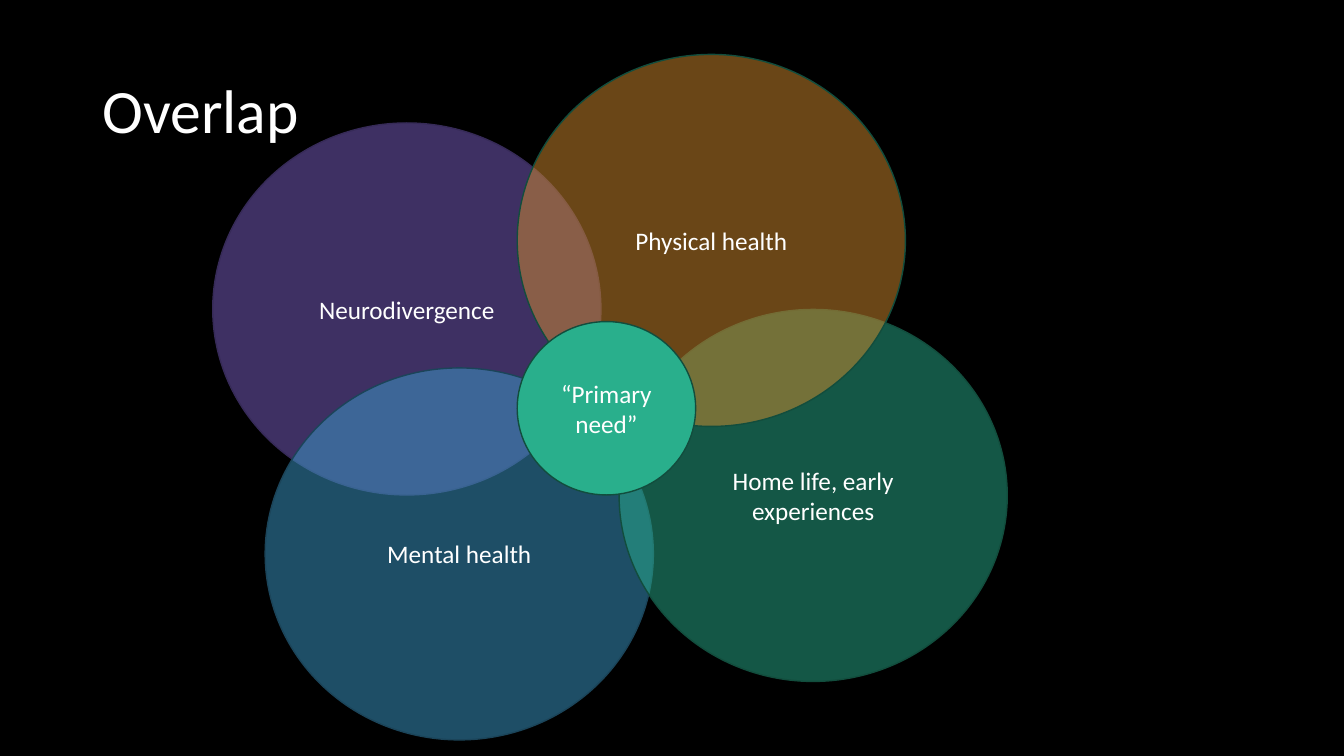
import pptx
import pptx.dml.color
import pptx.enum.shapes
import pptx.enum.text
import pptx.oxml
import pptx.oxml.ns
import pptx.util

PX = 9144  # EMU in one px, 100 px to the inch
SLIDE_SIZE = (1333, 750)
FONT = "Calibri"
COLORS = {
    "background": "000000",
    "text": "FFFFFF",
    "purple": "7C60C6",
    "purple_line": "362A57",
    "blue": "3D9CCC",
    "blue_line": "1B4459",
    "green": "29AF8C",
    "green_line": "124D3D",
    "orange": "D58C2E",
}

TITLE_BOX = (92, 40, 1150, 145)
CIRCLE_SIZE = (385, 369)
CENTRE_BOX = (513, 319, 177, 172)
# label, left and top, fill, line
CIRCLES = [
    ("Neurodivergence", (211, 122), "purple", "purple_line"),
    ("Mental health", (263, 365), "blue", "blue_line"),
    ("Home life, early experiences", (614, 307), "green", "green_line"),
    ("Physical health", (513, 54), "orange", "green_line"),
]


def emu(box):
    return [pptx.util.Emu(n * PX) for n in box]


def rgb(name):
    return pptx.dml.color.RGBColor.from_string(COLORS[name])


def write(s, text, size, align, spacing=1.0):
    tf = s.text_frame
    tf.word_wrap = True
    tf.vertical_anchor = pptx.enum.text.MSO_ANCHOR.MIDDLE
    p = tf.paragraphs[0]
    p.alignment = align
    p.line_spacing = spacing
    r = p.add_run()
    r.text = text
    for name, value in {"name": FONT, "size": pptx.util.Pt(size)}.items():
        setattr(r.font, name, value)
    r.font.color.rgb = rgb("text")


def set_opacity(s, percent):
    color = s.fill._xPr.find(".//" + pptx.oxml.ns.qn("a:srgbClr"))
    alpha = pptx.oxml.parse_xml(
        f'<a:alpha {pptx.oxml.ns.nsdecls("a")} val="{percent * 1000}"/>')
    color.append(alpha)


def add_title(slide, box, text):
    s = slide.shapes.add_textbox(*emu(box))
    write(s, text, 44, pptx.enum.text.PP_ALIGN.LEFT, 0.9)


def add_circle(slide, box, label, fill, line, opacity=100):
    s = slide.shapes.add_shape(pptx.enum.shapes.MSO_SHAPE.OVAL, *emu(box))
    s.shadow.inherit = False
    s.fill.solid()
    s.fill.fore_color.rgb = rgb(fill)
    if opacity < 100:
        set_opacity(s, opacity)
    s.line.color.rgb = rgb(line)
    s.line.width = pptx.util.Pt(1)
    write(s, label, 18, pptx.enum.text.PP_ALIGN.CENTER)


def add_overlap_slide(prs):
    slide = prs.slides.add_slide(prs.slide_layouts[6])
    slide.background.fill.solid()
    slide.background.fill.fore_color.rgb = rgb("background")
    add_title(slide, TITLE_BOX, "Overlap")
    for label, corner, fill, line in CIRCLES:
        add_circle(slide, corner + CIRCLE_SIZE, label, fill, line, opacity=50)
    add_circle(slide, CENTRE_BOX, "“Primary need”", "green", "green_line")


def main():
    prs = pptx.Presentation()
    prs.slide_width, prs.slide_height = emu(SLIDE_SIZE)
    add_overlap_slide(prs)
    prs.save("out.pptx")


if __name__ == "__main__":
    main()
